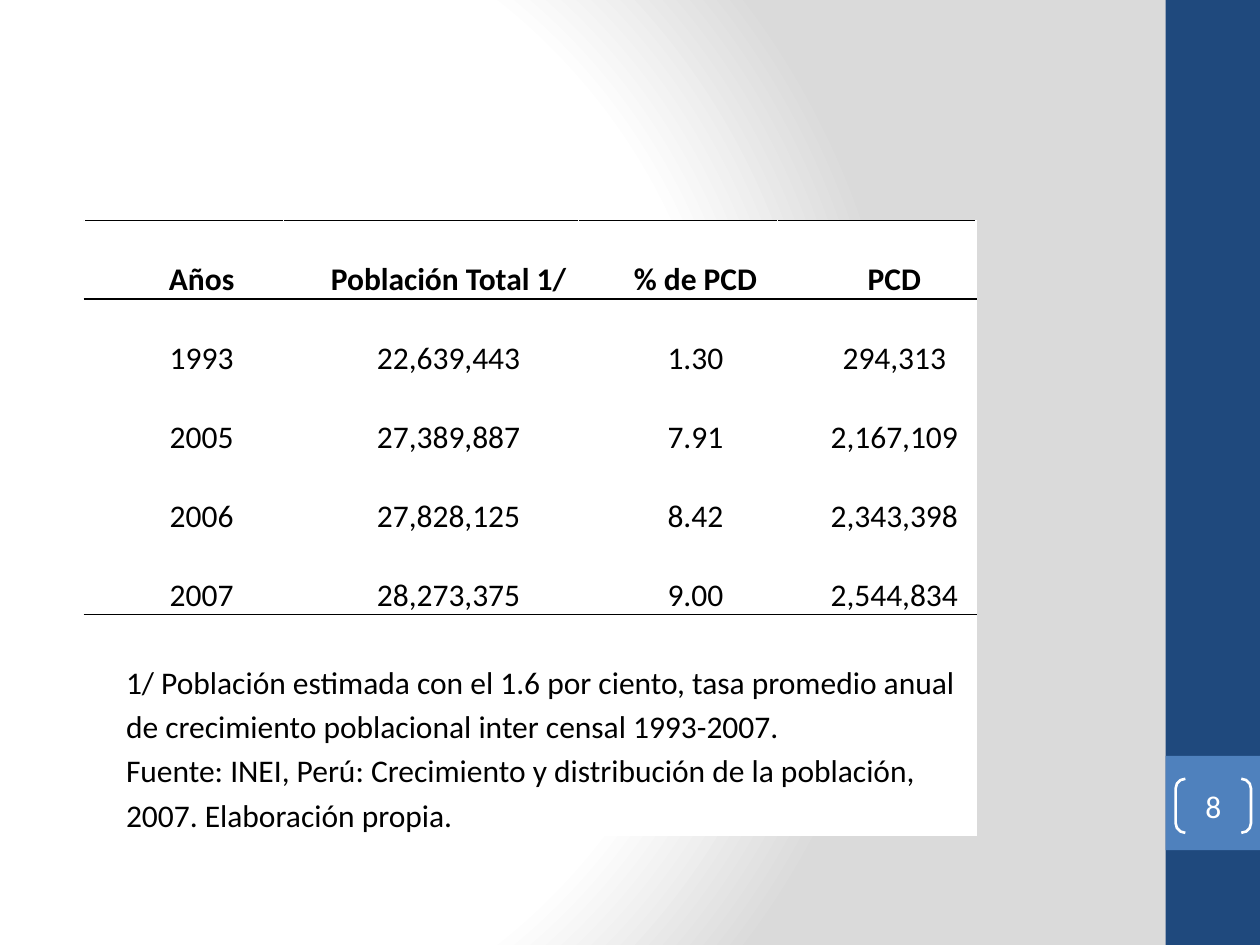
from lxml import etree
from pptx import Presentation
from pptx.dml.color import RGBColor
from pptx.enum.shapes import MSO_SHAPE
from pptx.enum.text import MSO_ANCHOR, PP_ALIGN
from pptx.oxml import parse_xml
from pptx.oxml.ns import nsdecls, qn
from pptx.util import Cm, Pt

RECTANGLE, BRACKETS = MSO_SHAPE.RECTANGLE, MSO_SHAPE.DOUBLE_BRACKET
CENTER, LEFT = PP_ALIGN.CENTER, PP_ALIGN.LEFT
BOTTOM, MIDDLE = MSO_ANCHOR.BOTTOM, MSO_ANCHOR.MIDDLE

COLORS = {
    "navy": "1F497D",
    "blue": "4F81BD",
    "white": "FFFFFF",
    "gray": "DADADA",
    "black": "000000",
}
COLUMN_WIDTHS = [4.02, 5.94, 4.01, 4.01]
DATA_ROW_HEIGHT = 1.59
NOTE_HEIGHTS = [2.67, 1.45]
POPULATION = [
    ["Años", "Población Total 1/", "% de PCD", "PCD"],
    ["1993", "22,639,443", "1.30", "294,313"],
    ["2005", "27,389,887", "7.91", "2,167,109"],
    ["2006", "27,828,125", "8.42", "2,343,398"],
    ["2007", "28,273,375", "9.00", "2,544,834"],
]
NOTES = [
    "1/ Población estimada con el 1.6 por ciento, tasa promedio anual "
    "de crecimiento poblacional inter censal 1993-2007.",
    "Fuente: INEI, Perú: Crecimiento y distribución de la población, "
    "2007. Elaboración propia.",
]


class SlideBuilder:
    font = "Calibri"
    size = Pt(18)

    def __init__(self, page):
        self.page = page

    def color(self, name):
        return RGBColor.from_string(COLORS[name])

    def background(self, stops):
        fill = self.page.background.fill
        fill.gradient()
        gradient = self.page.background._cSld.bg.bgPr.find(qn("a:gradFill"))
        for child in list(gradient):
            gradient.remove(child)
        stop_list = "".join(
            f'<a:gs pos="{position * 1000}"><a:srgbClr val="{COLORS[name]}"/></a:gs>'
            for position, name in stops
        )
        gradient.append(parse_xml(f'<a:gsLst {nsdecls("a")}>{stop_list}</a:gsLst>'))
        gradient.append(parse_xml(
            f'<a:path {nsdecls("a")} path="circle">'
            '<a:fillToRect l="20000" t="50000" r="100000" b="50000"/></a:path>'
        ))

    def text(self, para, content, color, align, bold=False):
        para.text = content
        para.alignment = align
        para.font.name = self.font
        para.font.size = self.size
        para.font.bold = bold
        para.font.color.rgb = self.color(color)

    def shape(self, kind, left, top, width, height, fill=None):
        box = self.page.shapes.add_shape(kind, Cm(left), Cm(top), Cm(width), Cm(height))
        box.shadow.inherit = False
        box.line.fill.background()
        if fill:
            box.fill.solid()
            box.fill.fore_color.rgb = self.color(fill)
        else:
            box.fill.background()
        return box

    def page_number(self, number, left, top, width, height):
        box = self.shape(BRACKETS, left, top, width, height)
        box.adjustments[0] = 0.18
        box.line.color.rgb = self.color("white")
        box.line.width = Pt(1.5)
        frame = box.text_frame
        frame.margin_left = frame.margin_right = 0
        frame.margin_top = frame.margin_bottom = 0
        frame.vertical_anchor = MIDDLE
        self.text(frame.paragraphs[0], number, "white", CENTER)

    def rule(self, cell, sides):
        properties = cell._tc.get_or_add_tcPr()
        for index, side in enumerate(sides):
            line = etree.Element(qn(f"a:ln{side}"), w=str(Pt(1)))
            solid = etree.SubElement(line, qn("a:solidFill"))
            etree.SubElement(solid, qn("a:srgbClr"), val=COLORS["black"])
            properties.insert(index, line)

    def cell(self, cell, content, align, bold=False):
        cell.fill.solid()
        cell.fill.fore_color.rgb = self.color("white")
        cell.margin_left = cell.margin_right = Cm(0.13)
        cell.margin_top = cell.margin_bottom = 0
        cell.vertical_anchor = BOTTOM
        para = cell.text_frame.paragraphs[0]
        self.text(para, content, "black", align, bold)
        para.line_spacing = 1.15
        para._p.get_or_add_pPr().set("marL", str(Cm(0.71)))

    def table(self, left, top, widths, data, notes, note_heights):
        heights = [DATA_ROW_HEIGHT] * len(data) + note_heights
        grid = self.page.shapes.add_table(
            len(heights), len(widths), Cm(left), Cm(top), Cm(sum(widths)), Cm(sum(heights))
        ).table
        grid.first_row = grid.horz_banding = False
        for column, width in zip(grid.columns, widths):
            column.width = Cm(width)
        for row, height in zip(grid.rows, heights):
            row.height = Cm(height)
        for row, values in enumerate(data):
            for column, value in enumerate(values):
                self.cell(grid.cell(row, column), value, CENTER, bold=row == 0)
        for row, note in enumerate(notes, len(data)):
            grid.cell(row, 0).merge(grid.cell(row, len(widths) - 1))
            self.cell(grid.cell(row, 0), note, LEFT)
        ruled_sides = {0: "TB", 1: "T", len(data) - 1: "B", len(data): "T"}
        for row, sides in ruled_sides.items():
            for column in range(len(widths)):
                self.rule(grid.cell(row, column), sides)


def main():
    deck = Presentation()
    deck.slide_width, deck.slide_height = Cm(25.4), Cm(19.05)
    slide = SlideBuilder(deck.slides.add_slide(deck.slide_layouts[6]))
    slide.background([(0, "white"), (75, "white"), (100, "gray")])
    slide.shape(RECTANGLE, 23.5, 0, 1.9, 19.05, "navy")
    slide.shape(RECTANGLE, 23.5, 15.24, 1.9, 1.9, "blue")
    slide.table(1.7, 4.44, COLUMN_WIDTHS, POPULATION, NOTES, NOTE_HEIGHTS)
    slide.page_number("8", 23.7, 15.7, 1.52, 1.09)
    deck.save("out.pptx")


if __name__ == "__main__":
    main()
